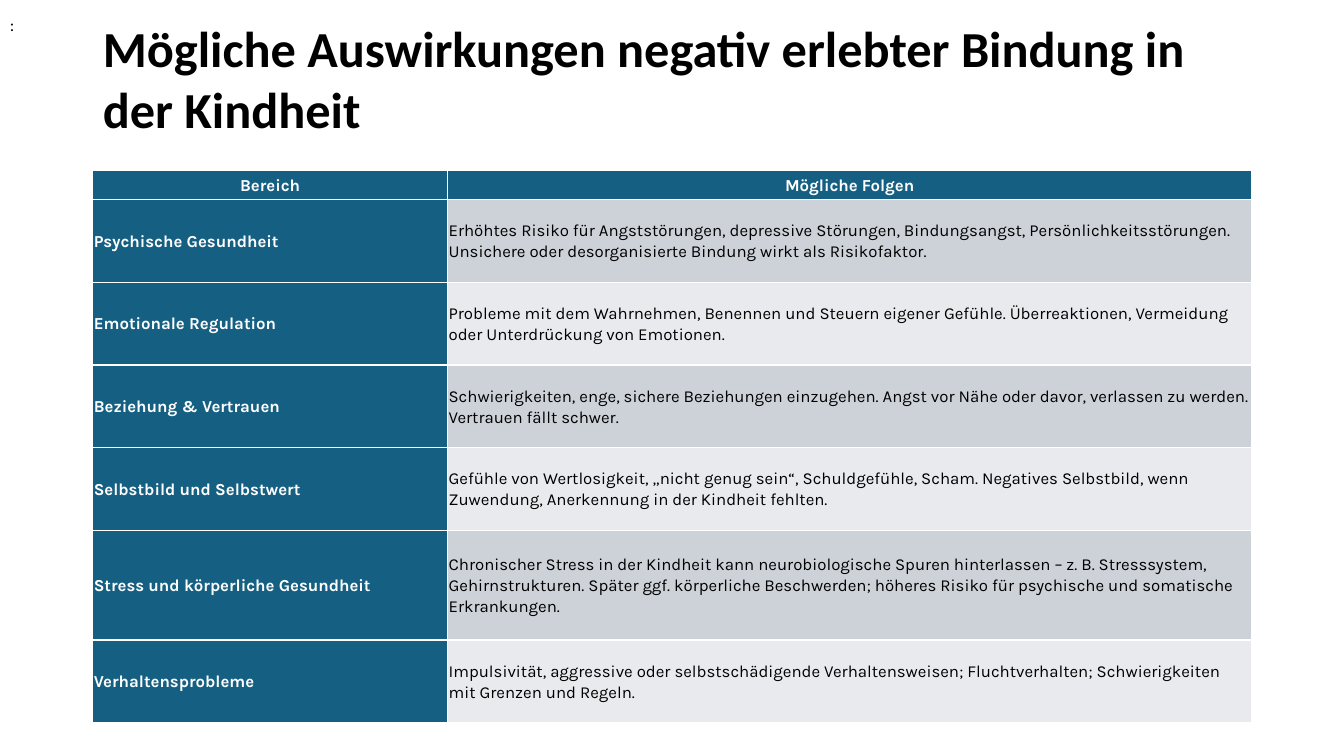
from pptx import Presentation
from pptx.dml.color import RGBColor
from pptx.enum.text import MSO_ANCHOR, MSO_AUTO_SIZE, PP_ALIGN
from pptx.util import Pt

TITLE = "Mögliche Auswirkungen negativ erlebter Bindung in der Kindheit"
HEADER = ("Bereich", "Mögliche Folgen")
EFFECTS = [
    ("Psychische Gesundheit",
     "Erhöhtes Risiko für Angststörungen, depressive Störungen, Bindungsangst, "
     "Persönlichkeitsstörungen. Unsichere oder desorganisierte Bindung wirkt als Risikofaktor."),
    ("Emotionale Regulation",
     "Probleme mit dem Wahrnehmen, Benennen und Steuern eigener Gefühle. "
     "Überreaktionen, Vermeidung oder Unterdrückung von Emotionen."),
    ("Beziehung & Vertrauen",
     "Schwierigkeiten, enge, sichere Beziehungen einzugehen. "
     "Angst vor Nähe oder davor, verlassen zu werden. Vertrauen fällt schwer."),
    ("Selbstbild und Selbstwert",
     "Gefühle von Wertlosigkeit, „nicht genug sein“, Schuldgefühle, Scham. "
     "Negatives Selbstbild, wenn Zuwendung, Anerkennung in der Kindheit fehlten."),
    ("Stress und körperliche Gesundheit",
     "Chronischer Stress in der Kindheit kann neurobiologische Spuren hinterlassen – "
     "z. B. Stresssystem, Gehirnstrukturen. Später ggf. körperliche Beschwerden; "
     "höheres Risiko für psychische und somatische Erkrankungen."),
    ("Verhaltensprobleme",
     "Impulsivität, aggressive oder selbstschädigende Verhaltensweisen; "
     "Fluchtverhalten; Schwierigkeiten mit Grenzen und Regeln."),
]
COLUMN_WIDTHS = (253.5, 574.5)
ROW_HEIGHTS = (21, 59, 59, 59, 59, 78.5, 59)
LEFT, WIDTH = 66.25, sum(COLUMN_WIDTHS)
CELL_INSET = 0.75

BLACK = RGBColor(0x00, 0x00, 0x00)
WHITE = RGBColor(0xFF, 0xFF, 0xFF)
TEAL = RGBColor(0x15, 0x60, 0x82)
BANDS = (RGBColor(0xCC, 0xD2, 0xD8), RGBColor(0xE8, 0xEA, 0xED))


def set_font(para, name, size, color, bold=False):
    font = para.font
    font.name, font.size, font.bold = name, Pt(size), bold
    font.color.rgb = color


def add_title(page):
    title = page.shapes.title
    title.left, title.top = Pt(LEFT), Pt(28.75)
    title.width, title.height = Pt(WIDTH), Pt(70.5)
    frame = title.text_frame
    frame.text = TITLE
    frame.word_wrap = True
    frame.auto_size = MSO_AUTO_SIZE.NONE
    frame.vertical_anchor = MSO_ANCHOR.MIDDLE
    frame.margin_bottom = Pt(20.5)
    para = frame.paragraphs[0]
    para.alignment = PP_ALIGN.LEFT
    set_font(para, "Calibri", 36, BLACK, True)


def fill_cell(cell, text, row, column):
    is_label = row == 0 or column == 0
    cell.text = text
    cell.vertical_anchor = MSO_ANCHOR.MIDDLE
    cell.margin_left = cell.margin_right = Pt(CELL_INSET)
    cell.margin_top = cell.margin_bottom = Pt(CELL_INSET)
    cell.fill.solid()
    cell.fill.fore_color.rgb = TEAL if is_label else BANDS[(row - 1) % 2]
    para = cell.text_frame.paragraphs[0]
    para.alignment = PP_ALIGN.CENTER if row == 0 else PP_ALIGN.LEFT
    para.line_spacing = 1.07
    para.space_after = Pt(8)
    set_font(para, "Karla", 12, WHITE if is_label else BLACK, is_label)


def add_effects_table(page):
    rows = [HEADER] + EFFECTS
    table = page.shapes.add_table(
        len(rows), len(HEADER), Pt(LEFT), Pt(121.75), Pt(WIDTH), Pt(sum(ROW_HEIGHTS))).table
    for column, width in zip(table.columns, COLUMN_WIDTHS):
        column.width = Pt(width)
    for row, height in zip(table.rows, ROW_HEIGHTS):
        row.height = Pt(height)
    for row, texts in enumerate(rows):
        for column, text in enumerate(texts):
            fill_cell(table.cell(row, column), text, row, column)


def add_colon(page):
    box = page.shapes.add_textbox(Pt(0), Pt(7.25), Pt(18), Pt(21.5))
    frame = box.text_frame
    frame.text = ":"
    frame.word_wrap = False
    frame.auto_size = MSO_AUTO_SIZE.SHAPE_TO_FIT_TEXT
    frame.vertical_anchor = MSO_ANCHOR.MIDDLE
    set_font(frame.paragraphs[0], "Calibri", 12, BLACK)


def main():
    deck = Presentation()
    deck.slide_width, deck.slide_height = Pt(960), Pt(540)
    page = deck.slides.add_slide(deck.slide_layouts.get_by_name("Title Only"))
    add_title(page)
    add_effects_table(page)
    add_colon(page)
    deck.save("out.pptx")


if __name__ == "__main__":
    main()
